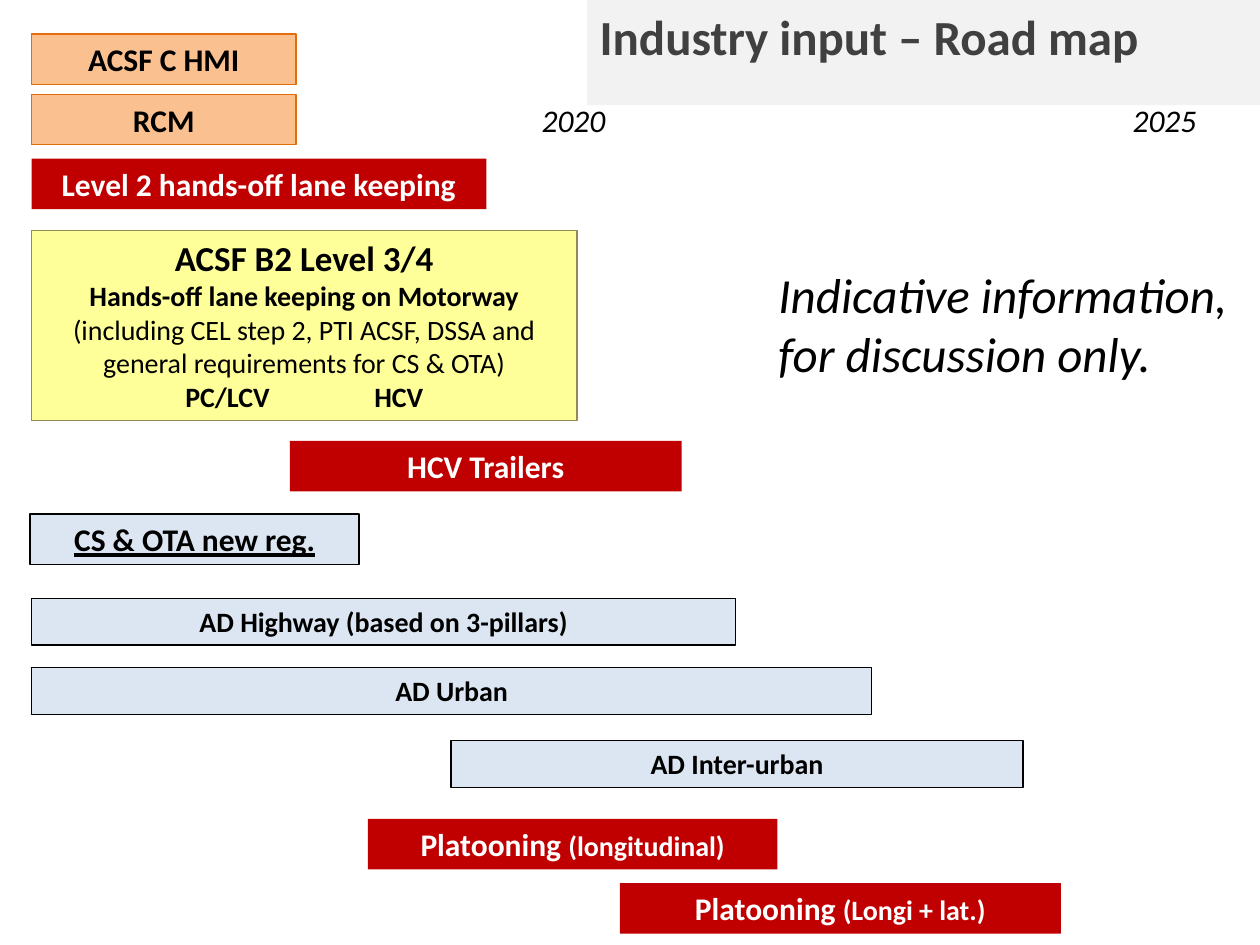
from pptx import Presentation
from pptx.dml.color import RGBColor
from pptx.enum.shapes import MSO_SHAPE
from pptx.enum.text import MSO_ANCHOR, MSO_AUTO_SIZE, PP_ALIGN
from pptx.util import Inches, Pt

RECTANGLE = MSO_SHAPE.RECTANGLE
TOP = MSO_ANCHOR.TOP
GROW = MSO_AUTO_SIZE.SHAPE_TO_FIT_TEXT
LEFT, CENTER = PP_ALIGN.LEFT, PP_ALIGN.CENTER

COLORS = {
    "black": "000000", "white": "FFFFFF", "title": "404040", "band": "F2F2F2",
    "orange": "FAC090", "orange edge": "E46C0A", "red": "C00000",
    "yellow": "FFFF99", "yellow edge": "948A54", "blue": "DCE6F2",
}
STYLES = {
    "current": {"fill": "orange", "edge": "orange edge", "text": "black"},
    "proposed": {"fill": "red", "edge": None, "text": "white"},
    "motorway": {"fill": "yellow", "edge": "yellow edge", "text": "black"},
    "future": {"fill": "blue", "edge": "black", "text": "black"},
}
START = 0.25
BAR, SLIM = 0.4, 0.37
BOLD = {"bold": True}
ITALIC = {"italic": True}
PLAIN = {"bold": False}
UNDERLINED = {"bold": True, "underline": True}

TITLE = "Industry input – Road map"
MOTORWAY = [
    [("ACSF B2 Level 3/4", 20, BOLD)],
    [("Hands-off lane keeping on Motorway ", 16, BOLD),
     ("(including CEL step 2, PTI ACSF, DSSA and general requirements for CS & OTA)", 16, PLAIN)],
    [("PC/LCV\t\tHCV", 16, BOLD)],
]
BARS = [
    ("current", START, 0.27, 2.1, BAR, 0.75, [[("ACSF C HMI", 18, BOLD)]]),
    ("current", START, 0.75, 2.1, BAR, 0.75, [[("RCM", 18, BOLD)]]),
    ("proposed", START, 1.26, 3.61, BAR, 0, [[("Level 2 hands-off lane keeping", 18, BOLD)]]),
    ("motorway", START, 1.83, 4.33, 1.51, 0.75, MOTORWAY),
    ("proposed", 2.3, 3.5, 3.11, BAR, 0, [[("HCV Trailers", 18, BOLD)]]),
    ("future", 0.24, 4.08, 2.61, BAR, 1, [[("CS & OTA new reg.", 18, UNDERLINED)]]),
    ("future", START, 4.75, 5.59, SLIM, 0.75, [[("AD Highway (based on 3-pillars)", 16, BOLD)]]),
    ("future", START, 5.3, 6.67, SLIM, 0.75, [[("AD Urban", 16, BOLD)]]),
    ("future", 3.58, 5.88, 4.54, SLIM, 0.75, [[("AD Inter-urban", 16, BOLD)]]),
    ("proposed", 2.92, 6.5, 3.25, BAR, 0,
     [[("Platooning ", 18, BOLD), ("(longitudinal)", 16, BOLD)]]),
    ("proposed", 4.92, 7.01, 3.5, BAR, 0,
     [[("Platooning ", 18, BOLD), ("(Longi + lat.)", 16, BOLD)]]),
]
NOTES = [
    (4.2, 0.75, 0.71, 0.4, [[("2020", 18, ITALIC)]]),
    (8.89, 0.75, 0.71, 0.4, [[("2025", 18, ITALIC)]]),
    (6.08, 2.05, 3.8, 1.04,
     [[("Indicative information,", 28, ITALIC)], [("for discussion only.", 28, ITALIC)]]),
]


def color(name):
    return RGBColor.from_string(COLORS[name])


def paint(shape, name):
    shape.fill.solid()
    shape.fill.fore_color.rgb = color(name)


def write(shape, paragraphs, text_color, align, wrap=True):
    frame = shape.text_frame
    frame.word_wrap = wrap
    frame.auto_size = GROW
    frame.vertical_anchor = TOP
    for index, spans in enumerate(paragraphs):
        para = frame.add_paragraph() if index else frame.paragraphs[0]
        para.alignment = align
        for text, size, formats in spans:
            span = para.add_run()
            span.text = text
            values = {"name": "Calibri", "size": Pt(size), **formats}
            for key, value in values.items():
                setattr(span.font, key, value)
            span.font.color.rgb = color(text_color)


def add_title(page):
    title = page.shapes.title
    places = {"left": 4.66, "top": 0, "width": 5.34, "height": 0.57}
    for key, value in places.items():
        setattr(title, key, Inches(value))
    paint(title, "band")
    write(title, [[(TITLE, 28, BOLD)]], "title", LEFT)


def add_bar(page, style_name, left, top, width, height, weight, paragraphs):
    style = STYLES[style_name]
    box = page.shapes.add_shape(RECTANGLE, *map(Inches, (left, top, width, height)))
    box.shadow.inherit = False
    paint(box, style["fill"])
    if style["edge"]:
        box.line.color.rgb = color(style["edge"])
        box.line.width = Pt(weight)
    else:
        box.line.fill.background()
    write(box, paragraphs, style["text"], CENTER)


def add_note(page, left, top, width, height, paragraphs):
    box = page.shapes.add_textbox(*map(Inches, (left, top, width, height)))
    write(box, paragraphs, "black", LEFT, wrap=False)


def main():
    deck = Presentation()
    deck.slide_width, deck.slide_height = Inches(10), Inches(7.5)
    page = deck.slides.add_slide(deck.slide_layouts.get_by_name("Title Only"))
    add_title(page)
    for bar in BARS:
        add_bar(page, *bar)
    for note in NOTES:
        add_note(page, *note)
    deck.save("out.pptx")


if __name__ == "__main__":
    main()
